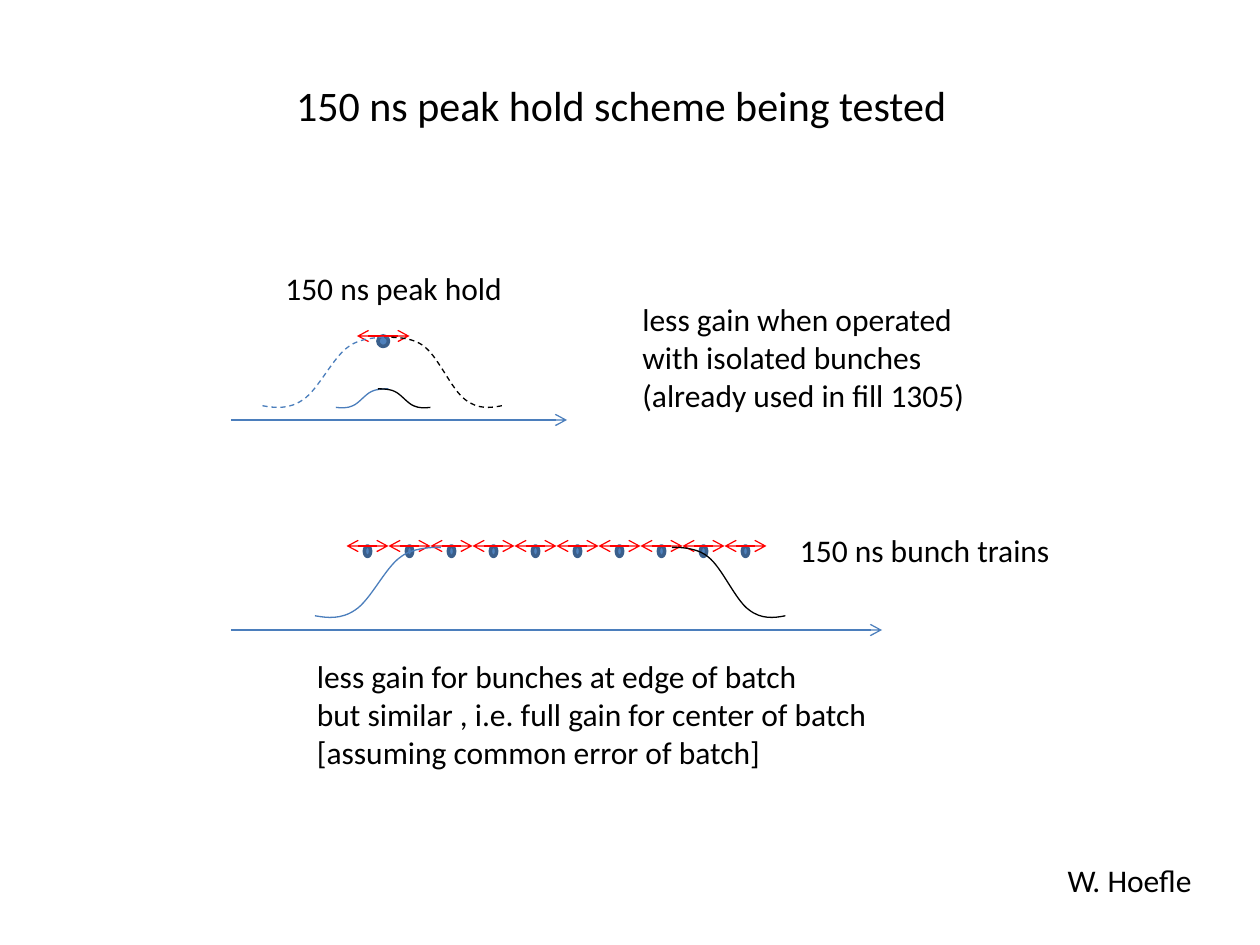
from typing import NamedTuple

from lxml import etree
from pptx import Presentation
from pptx import util as u
from pptx.dml.color import RGBColor
from pptx.enum import dml, shapes, text
from pptx.oxml import ns

BLACK = RGBColor(0x00, 0x00, 0x00)
RED = RGBColor(0xFF, 0x00, 0x00)
BLUE = RGBColor(0x4F, 0x81, 0xBD)
LINE_BLUE = RGBColor(0x4B, 0x7E, 0xBC)
DARK_BLUE = RGBColor(0x3A, 0x5F, 0x8C)

COLUMNS, ROWS = 120, 90
SLIDE_WIDTH, SLIDE_HEIGHT = u.Inches(10), u.Inches(7.5)
HOLD = 4  # columns held per bunch in a train
TRAIN_LEFT, TRAIN_ROW = 33, 52
BATCH = 5  # bunches per group

# Start point, then three Bezier points per segment, as shares of width and height
RISE = [(0, .95), (.1, .98), (.21, 1), (.32, .87), (.44, .74), (.56, .29),
        (.68, .15), (.79, 0), (1, .02), (1, .02)]


class Note(NamedTuple):
    column: float
    row: float
    width: float
    height: float
    lines: tuple[str, ...]


class Axis(NamedTuple):
    left: float
    right: float
    row: float


class Slope(NamedTuple):
    """One flank of a gain curve; a falling flank is the rise mirrored."""
    column: float
    row: float
    width: float
    height: float
    falling: bool = False
    dashed: bool = False


TITLE = Note(27, 7, 65, 6, ("150 ns peak hold scheme being tested",))
NOTES = [
    Note(26, 25, 23.3, 4.8, ("150 ns peak hold",)),
    Note(29, 62, 57, 12.1, ("less gain for bunches at edge of batch",
                            "but similar , i.e. full gain for center of batch",
                            "[assuming common error of batch]")),
    Note(60, 28, 33.5, 12.1, ("less gain when operated",
                              "with isolated bunches",
                              "(already used in fill 1305)")),
    Note(75, 50, 26.5, 4.8, ("150 ns bunch trains",)),
    Note(100.5, 81.4, 14.4, 4.8, ("W. Hoefle",)),
]
AXES = [Axis(22, 54, 40), Axis(22, 84, 60)]
SLOPES = [
    Slope(32, 37, 5, 1.9),
    Slope(36, 37, 5, 1.9, falling=True),
    Slope(64, 52, 10.8, 7, falling=True),
    Slope(30, 52, 12, 7),
    Slope(25, 32, 12, 7, dashed=True),
    Slope(37, 32, 10.8, 7, falling=True, dashed=True),
]


def x(columns: float) -> int:
    return round(SLIDE_WIDTH * columns / COLUMNS)


def y(rows: float) -> int:
    return round(SLIDE_HEIGHT * rows / ROWS)


def write(shape, note: Note, size: int) -> None:
    shape.left, shape.top = x(note.column), y(note.row)
    shape.width, shape.height = x(note.width), y(note.height)
    frame = shape.text_frame
    frame.text = "\n".join(note.lines)
    frame.word_wrap = False
    frame.auto_size = text.MSO_AUTO_SIZE.SHAPE_TO_FIT_TEXT
    frame.vertical_anchor = text.MSO_ANCHOR.TOP
    for paragraph in frame.paragraphs:
        paragraph.alignment = text.PP_ALIGN.LEFT
        paragraph.font.name = "Calibri"
        paragraph.font.size = u.Pt(size)
        paragraph.font.color.rgb = BLACK


def draw_arrow(parent, left: float, right: float, row: float,
               color: RGBColor, double: bool = False) -> None:
    arrow = parent.add_connector(shapes.MSO_CONNECTOR.STRAIGHT,
                                 x(left), y(row), x(right), y(row))
    arrow.line.color.rgb = color
    arrow.line.width = u.Pt(0.75)
    properties = arrow.line._get_or_add_ln()
    for end in ("a:headEnd", "a:tailEnd") if double else ("a:tailEnd",):
        etree.SubElement(properties, ns.qn(end), type="arrow")
    etree.SubElement(arrow._element.spPr, ns.qn("a:effectLst"))


def draw_bunch(parent, center: float, row: float, width: float) -> None:
    bunch = parent.add_shape(shapes.MSO_SHAPE.OVAL, x(center - width / 2), y(row),
                             x(width), y(1))
    bunch.shadow.inherit = False
    bunch.fill.solid()
    bunch.fill.fore_color.rgb = BLUE
    bunch.line.color.rgb = DARK_BLUE
    bunch.line.width = u.Pt(2)


def draw_slope(parent, slope: Slope) -> None:
    points = [(x(slope.column + slope.width * (1 - across if slope.falling else across)),
               y(slope.row + slope.height * down)) for across, down in RISE]
    builder = parent.build_freeform(*points[0])
    builder.add_line_segments(points[1:], close=False)
    curve = builder.convert_to_shape()
    bend(curve)
    curve.shadow.inherit = False
    curve.fill.background()
    curve.line.color.rgb = BLACK if slope.falling else LINE_BLUE
    curve.line.width = u.Pt(0.75)
    if slope.dashed:
        curve.line.dash_style = dml.MSO_LINE.DASH


def bend(curve) -> None:
    """Turn each three straight segments into one cubic Bezier segment."""
    segments = list(curve._element.iter(ns.qn("a:lnTo")))
    outline = segments[0].getparent()
    for start in range(0, len(segments), 3):
        bezier = etree.SubElement(outline, ns.qn("a:cubicBezTo"))
        for segment in segments[start:start + 3]:
            bezier.append(segment[0])
            outline.remove(segment)


def draw_batch(parent, first: int) -> None:
    group = parent.add_group_shape().shapes
    for number in range(first, first + BATCH):
        left = TRAIN_LEFT + number * HOLD
        draw_bunch(group, left + HOLD / 2, TRAIN_ROW, 0.6)
        draw_arrow(group, left, left + HOLD, TRAIN_ROW, RED, double=True)


def main() -> None:
    deck = Presentation()
    deck.slide_width, deck.slide_height = SLIDE_WIDTH, SLIDE_HEIGHT
    slide = deck.slides.add_slide(deck.slide_layouts[5])
    canvas = slide.shapes
    write(canvas.title, TITLE, 24)
    for axis in AXES:
        draw_arrow(canvas, axis.left, axis.right, axis.row, LINE_BLUE)
    draw_bunch(canvas, 36.5, 32, 1)
    draw_arrow(canvas, 34, 39, 32, RED, double=True)
    for first in (0, BATCH):
        draw_batch(canvas, first)
    for slope in SLOPES:
        draw_slope(canvas, slope)
    for note in NOTES:
        write(canvas.add_textbox(0, 0, 0, 0), note, 18)
    deck.save("out.pptx")


if __name__ == "__main__":
    main()
